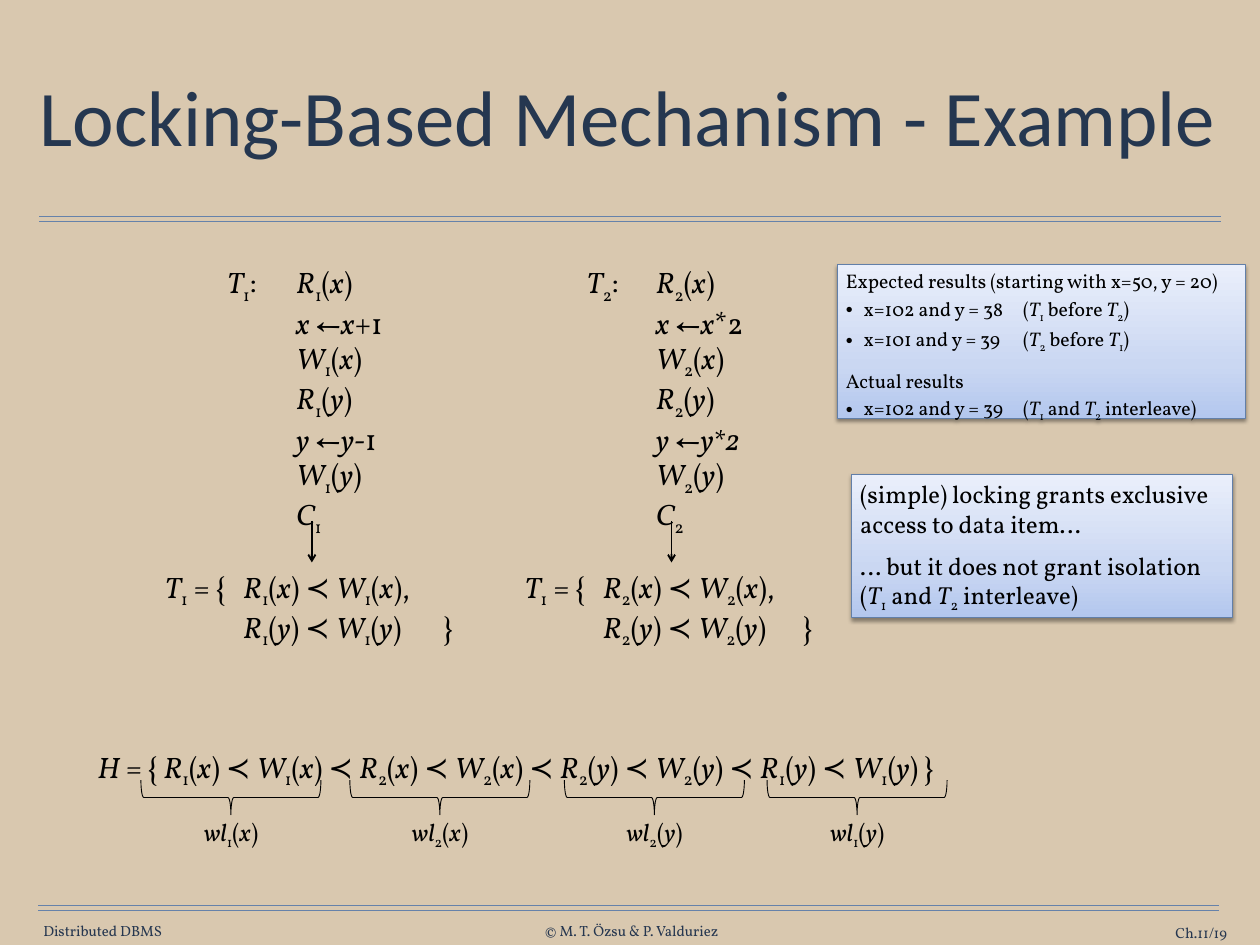
from copy import deepcopy

from pptx import Presentation
from pptx import util as u
from pptx.dml.color import RGBColor
from pptx.enum import shapes, text
from pptx.oxml import ns
from lxml import etree

ALIGN = text.PP_ALIGN
TOP, MIDDLE = text.MSO_ANCHOR.TOP, text.MSO_ANCHOR.MIDDLE
INSET = (0.36, 0.18, 0.36, 0.18)
BOX_INSET = (0.25, 0.13, 0.25, 0.13)
INDENT = 0.51


def rgb(value):
    return RGBColor.from_string(value)


def add_xml(parent, tag, **attrs):
    return etree.SubElement(parent, ns.qn(tag), attrs)


def op(name, n, item):
    """Marked-up operation such as R1(x)."""
    return f"~{name}~_{n}(~{item}~)"


class Deck:
    ink, navy, rule = "000000", "263750", "6682AA"
    serif, sans = "Vollkorn", "Calibri"
    gradient = [(0, "B3C7EE"), (0.35, "CAD7F2"), (1, "EAEFFB")]

    def __init__(self, prs):
        self.s = prs.slides.add_slide(prs.slide_layouts[1])
        fill = self.s.background.fill
        fill.solid()
        fill.fore_color.rgb = rgb("D9C8AF")

    def place(self, sp, at):
        for name, value in zip(("left", "top", "width", "height"), at):
            setattr(sp, name, u.Cm(value))

    def frame(self, sp, inset, anchor=TOP, wrap=True):
        tf = sp.text_frame
        style = {"word_wrap": wrap, "vertical_anchor": anchor,
                 "auto_size": text.MSO_AUTO_SIZE.NONE}
        for side, value in zip(("left", "top", "right", "bottom"), inset):
            style["margin_" + side] = u.Cm(value)
        for name, value in style.items():
            setattr(tf, name, value)
        return tf

    def run(self, p, words, size, italic, sub=False, color=ink, font=serif):
        if not words:
            return
        r = p.add_run()
        r.text = words
        style = {"name": font, "size": u.Pt(size), "italic": italic}
        for name, value in style.items():
            setattr(r.font, name, value)
        r.font.color.rgb = rgb(color)
        if sub:
            r._r.get_or_add_rPr().set("baseline", "-25000")

    def fill_text(self, p, marked, size, align=ALIGN.LEFT, tabs=(), **look):
        """Fill a paragraph: ~ toggles italic, _ lowers the next character."""
        p.alignment = align
        if tabs:
            tab_list = add_xml(p._p.get_or_add_pPr(), "a:tabLst")
            for pos in tabs:
                add_xml(tab_list, "a:tab", pos=str(u.Cm(pos)), algn="l")
        for i, line in enumerate(marked.split("\n")):
            if i:
                p.add_line_break()
            for j, part in enumerate(line.split("~")):
                italic = j % 2 == 1
                first, *lowered = part.split("_")
                self.run(p, first, size, italic, **look)
                for piece in lowered:
                    self.run(p, piece[0], size, italic, sub=True, **look)
                    self.run(p, piece[1:], size, italic, **look)

    def title(self, words, at):
        sp = self.s.shapes.title
        self.place(sp, at)
        p = self.frame(sp, (0.15,) * 4, MIDDLE).paragraphs[0]
        p.line_spacing = 0.9
        self.fill_text(p, words, 64, color="253750", font=self.sans)

    def label(self, marked, at, size=24, inset=INSET, anchor=TOP, wrap=True, **look):
        sp = self.s.shapes.add_textbox(*map(u.Cm, at))
        p = self.frame(sp, inset, anchor, wrap).paragraphs[0]
        self.fill_text(p, marked, size, **look)

    def line(self, x1, y1, x2, y2, color=rule, width=1, arrow=False):
        c = self.s.shapes.add_connector(shapes.MSO_CONNECTOR.STRAIGHT,
                                        *map(u.Cm, (x1, y1, x2, y2)))
        c.line.color.rgb = rgb(color)
        c.line.width = u.Pt(width)
        if arrow:
            add_xml(c._element.spPr.find(ns.qn("a:ln")), "a:tailEnd", type="arrow")
        add_xml(c._element.spPr, "a:effectLst")

    def brace(self, center_x, center_y, thickness, span):
        """Brace that opens upward, centred on a point."""
        at = (center_x - thickness / 2, center_y - span / 2, thickness, span)
        sp = self.s.shapes.add_shape(shapes.MSO_SHAPE.LEFT_BRACE, *map(u.Cm, at))
        sp.rotation = 270
        sp.shadow.inherit = False
        sp.fill.background()
        sp.line.color.rgb = rgb(self.ink)
        sp.line.width = u.Pt(0.75)

    def panel(self, sp, rows, size):
        """Gradient box with rows of (text, space before, indented, bulleted)."""
        sp.fill.gradient()
        sp.fill.gradient_angle = 90
        stops = sp._element.spPr.find(".//" + ns.qn("a:gsLst"))
        stops.insert(1, deepcopy(stops[0]))
        for stop, (position, color) in zip(sp.fill.gradient_stops, self.gradient):
            stop.position = position
            stop.color.rgb = rgb(color)
        sp.line.color.rgb = rgb("627FA8")
        sp.line.width = u.Pt(0.75)
        sp.shadow.inherit = False
        shadow = add_xml(sp._element.spPr.find(ns.qn("a:effectLst")), "a:outerShdw",
                         blurRad="40000", dist="20000", dir="5400000", rotWithShape="0")
        add_xml(add_xml(shadow, "a:srgbClr", val=self.ink), "a:alpha", val="38000")
        tf = self.frame(sp, BOX_INSET)
        for i, (marked, before, indented, bulleted) in enumerate(rows):
            p = tf.add_paragraph() if i else tf.paragraphs[0]
            p.space_before = u.Pt(before)
            pPr = p._p.get_or_add_pPr()
            margin = u.Cm(INDENT) if indented else 0
            pPr.set("marL", str(margin))
            pPr.set("indent", str(-margin))
            if bulleted:
                add_xml(pPr, "a:buChar", char="•")
            else:
                add_xml(pPr, "a:buNone")
            self.fill_text(p, marked, size)


def main():
    prs = Presentation()
    prs.slide_width, prs.slide_height = u.Cm(36.12), u.Cm(27.1)
    deck = Deck(prs)

    for left, right, y in ((1.12, 35, 6.2), (1.1, 34.95, 25.96)):
        for gap in (0, 0.15):
            deck.line(left, y + gap, right, y + gap)
    footers = [("Distributed DBMS", 1.19, 26.44, 3.51, ALIGN.CENTER),
               ("© M. T. Özsu & P. Valduriez", 15.47, 26.44, 5.28, ALIGN.CENTER),
               ("Ch.11/19", 31.27, 26.49, 3.91, ALIGN.RIGHT)]
    for words, x, y, width, align in footers:
        deck.label(words, (x, y, width, 0.51), 12, (0,) * 4, MIDDLE,
                   wrap=align == ALIGN.RIGHT, align=align, color=deck.navy)

    deck.title("Locking-Based Mechanism - Example", (0.99, 1.24, 34.14, 4.47))

    updates = {1: ("~x~+1", "~y-~1"), 2: ("~x~*2", "~y*2~")}
    for n, (new_x, new_y) in updates.items():
        shift = 10.31 * (n - 1)
        steps = [op("R", n, "x"), "~x~ ←" + new_x, op("W", n, "x"),
                 op("R", n, "y"), "~y~ ←" + new_y, op("W", n, "y"), f"~C~_{n}"]
        deck.label(f"~T~_{n}:\t" + "\n\t".join(steps),
                   (6.15 + shift, 7.4, 5.59, 7.54), tabs=(1.98,))
        order = [f"{op('R', n, item)} ≺ {op('W', n, item)}" for item in "xy"]
        deck.label("~T~_1 = {\t" + ",\n\t".join(order) + "\t}",
                   (4.37 + shift, 16.13, 9.12, 2.41), tabs=(2.24, 7.98))
        deck.line(8.94 + shift, 14.94, 8.94 + shift, 16.13, deck.ink, 1.5, arrow=True)

    locks = [(1, "x", 6.62), (2, "x", 12.61), (2, "y", 18.76), (1, "y", 24.57)]
    history = [op(name, n, item) for n, item, _ in locks for name in "RW"]
    deck.label("~H~ = { " + " ≺ ".join(history) + " }",
               (0, 21.29, 29.57, 1.37), align=ALIGN.CENTER)
    for n, item, x in locks:
        deck.brace(x, 22.87, 0.99, 5.16)
        deck.label(op("wl", n, item), (x - 1.31, 23.24, 2.62, 1.22), 20,
                   align=ALIGN.CENTER)

    note = deck.s.shapes.add_shape(shapes.MSO_SHAPE.RECTANGLE,
                                   *map(u.Cm, (24.41, 13.61, 10.92, 4.11)))
    deck.panel(note, [
        ("(simple) locking grants exclusive access to data item…", 0, False, False),
        ("… but it does not grant isolation (~T~_1 and ~T~_2 interleave)", 10, False, False),
    ], 20)

    results = deck.s.placeholders[1]
    deck.place(results, (24, 7.59, 11.71, 4.42))
    deck.panel(results, [
        ("Expected results (starting with x=50, y = 20)", 0, False, False),
        ("x=102 and y = 38\t(~T~_1 before ~T~_2)", 3, True, True),
        ("x=101 and y = 39\t(~T~_2 before ~T~_1)", 3, True, True),
        ("Actual results", 12, True, False),
        ("x=102 and y = 39\t(~T~_1 and ~T~_2 interleave)", 3, True, True),
    ], 16)

    prs.save("out.pptx")


if __name__ == "__main__":
    main()
